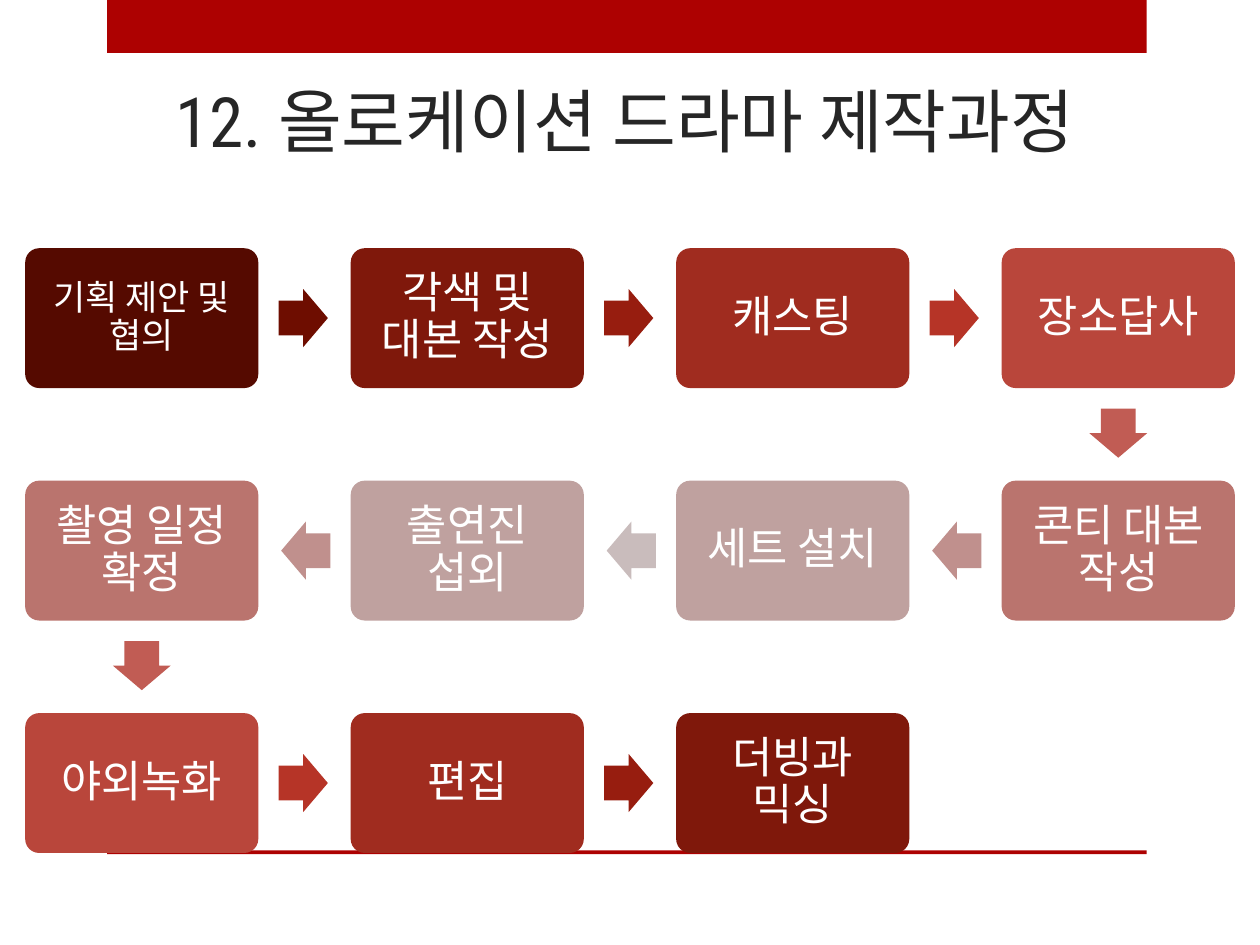
from pptx import Presentation
from pptx.dml.color import RGBColor
from pptx.enum.shapes import MSO_SHAPE
from pptx.enum.text import MSO_ANCHOR, PP_ALIGN
from pptx.util import Inches, Pt

BOX_W, BOX_H = 1.85, 1.11
ARROW_W, ARROW_H = 0.39, 0.46
LEFT, TOP = 0.2, 1.97
COLUMNS = 4
PITCH_X, PITCH_Y = 7.75 / 3, 1.845
ARROW_SHIFT = 0.01

STEPS = [
    ("기획 제안 및 협의", "550A00"),
    ("각색 및 대본 작성", "7F180B"),
    ("캐스팅", "A02C1F"),
    ("장소답사", "B9463B"),
    ("콘티 대본 작성", "BA746E"),
    ("세트 설치", "BFA19F"),
    ("출연진 섭외", "BFA19F"),
    ("촬영 일정 확정", "BA746E"),
    ("야외녹화", "B9463B"),
    ("편집", "A02C1F"),
    ("더빙과 믹싱", "7F180B"),
]
ARROW_COLORS = ["6E0D00", "971D0F", "B63427", "C15C54", "C0908D",
                "C9BCBC", "C0908D", "C15C54", "B63427", "971D0F"]


def rgb(value):
    return RGBColor.from_string(value)


def cell(index):
    row, col = divmod(index, COLUMNS)
    return (COLUMNS - 1 - col if row % 2 else col), row


class Deck:
    """Holds the style and the current slide, and draws each kind of element."""

    accent, title_color, text_color = "AD0101", "262626", "FFFFFF"
    title_font, body_font = "Roboto Condensed", "Arial"

    def __init__(self, slide):
        self.s = slide

    def shape(self, kind, x, y, w, h, color):
        sp = self.s.shapes.add_shape(kind, Inches(x), Inches(y), Inches(w), Inches(h))
        sp.shadow.inherit = False
        sp.fill.solid()
        sp.fill.fore_color.rgb = rgb(color)
        sp.line.fill.background()
        return sp

    def band(self, y, h):
        self.shape(MSO_SHAPE.RECTANGLE, 0.85, y, 8.25, h, self.accent)

    def text(self, tf, text, size, font, color):
        tf.word_wrap = True
        p = tf.paragraphs[0]
        p.text = text
        p.alignment = PP_ALIGN.CENTER
        p.font.size = Pt(size)
        p.font.name = font
        p.font.color.rgb = rgb(color)
        return p

    def title(self, text):
        sp = self.s.shapes.title
        sp.left, sp.top = Inches(0.83), Inches(0.52)
        sp.width, sp.height = Inches(8.26), Inches(0.81)
        sp.text_frame.vertical_anchor = MSO_ANCHOR.BOTTOM
        self.text(sp.text_frame, text, 39.6, self.title_font, self.title_color)

    def step(self, col, row, text, color, size, inset):
        sp = self.shape(MSO_SHAPE.ROUNDED_RECTANGLE, LEFT + col * PITCH_X,
                        TOP + row * PITCH_Y, BOX_W, BOX_H, color)
        sp.adjustments[0] = 0.1
        tf = sp.text_frame
        tf.margin_left = tf.margin_right = Inches(inset)
        tf.margin_top = tf.margin_bottom = Inches(inset)
        tf.vertical_anchor = MSO_ANCHOR.MIDDLE
        p = self.text(tf, text, size, self.body_font, self.text_color)
        p.line_spacing = 0.9

    def arrow(self, start, end, color):
        dx, dy = end[0] - start[0], end[1] - start[1]
        x = LEFT + (start[0] + end[0]) / 2 * PITCH_X + (BOX_W - ARROW_W) / 2
        y = TOP + (start[1] + end[1]) / 2 * PITCH_Y + (BOX_H - ARROW_H) / 2
        sp = self.shape(MSO_SHAPE.RIGHT_ARROW, x - dx * ARROW_SHIFT,
                        y - dy * ARROW_SHIFT, ARROW_W, ARROW_H, color)
        sp.adjustments[0], sp.adjustments[1] = 0.6, 0.5
        sp.rotation = 90 if dy else 180 if dx < 0 else 0


def main():
    prs = Presentation()
    prs.slide_width, prs.slide_height = Inches(10), Inches(7.5)
    deck = Deck(prs.slides.add_slide(prs.slide_layouts[5]))
    deck.band(0, 0.42)
    deck.band(6.75, 0.03)
    deck.title("12. 올로케이션 드라마 제작과정")
    for i, (text, color) in enumerate(STEPS):
        size, inset = (25, 0.1) if i else (20, 0.08)
        deck.step(*cell(i), text, color, size, inset)
    for i, color in enumerate(ARROW_COLORS):
        deck.arrow(cell(i), cell(i + 1), color)
    prs.save("out.pptx")


if __name__ == "__main__":
    main()
